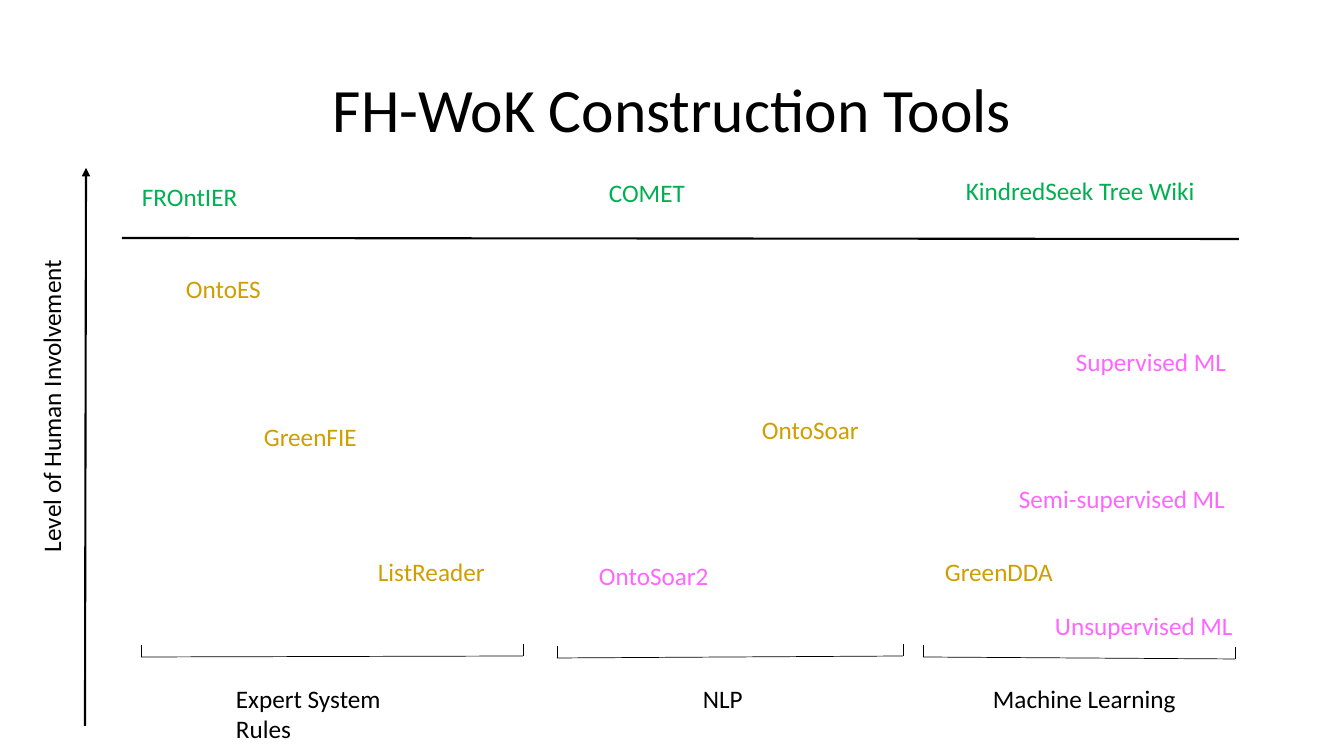
from pptx import Presentation
from pptx.dml.color import RGBColor as RGB
from pptx.enum.shapes import MSO_CONNECTOR as CONNECTOR
from pptx.enum.text import MSO_ANCHOR as ANCHOR, MSO_AUTO_SIZE as AUTO_SIZE, PP_ALIGN as ALIGN
from pptx.oxml.ns import qn
from pptx.util import Inches, Pt
from lxml.etree import SubElement

PX = Inches(1) / 100.8
THEME = {
    "font": "Calibri",
    "title": Pt(44),
    "label": Pt(18),
    "thick": Pt(1.5),
    "thin": Pt(0.5),
    "black": RGB.from_string("000000"),
    "green": RGB.from_string("00B050"),
    "gold": RGB.from_string("D09E00"),
    "pink": RGB.from_string("FF66FF"),
}
LABEL_FRAME = {"word_wrap": False, "auto_size": AUTO_SIZE.SHAPE_TO_FIT_TEXT}
TITLE_FRAME = {"word_wrap": True, "vertical_anchor": ANCHOR.MIDDLE}
LABEL_HEIGHT = 40
TICK = 12

prs = Presentation()
prs.slide_width, prs.slide_height = round(1344 * PX), round(756 * PX)
slide = prs.slides.add_slide(prs.slide_layouts[6])


def add_text(words, box, color="black", size="label", frame_format=LABEL_FRAME):
    label = slide.shapes.add_textbox(*[round(v * PX) for v in box])
    frame = label.text_frame
    frame.text = words
    for key, value in frame_format.items():
        setattr(frame, key, value)
    font = frame.paragraphs[0].runs[0].font
    for key, value in {"name": THEME["font"], "size": THEME[size]}.items():
        setattr(font, key, value)
    font.color.rgb = THEME[color]
    return label


def add_line(ends, weight):
    line = slide.shapes.add_connector(CONNECTOR.STRAIGHT, *[round(v * PX) for v in ends])
    line.line.color.rgb = THEME["black"]
    line.line.width = THEME[weight]
    SubElement(line.element.spPr, qn("a:effectLst"))
    return line


title = add_text("FH-WoK Construction Tools", (93, 40, 1159, 146), "black", "title", TITLE_FRAME)
for key, value in {"alignment": ALIGN.CENTER, "line_spacing": 0.9}.items():
    setattr(title.text_frame.paragraphs[0], key, value)

axis_title = add_text("Level of Human Involvement", (31, 257, 50, 305))
axis_title.element.txBody.bodyPr.set("vert", "vert270")

axis = add_line((85, 726, 86, 168), "thick")
SubElement(axis.line._get_or_add_ln(), qn("a:tailEnd"), type="triangle")
add_line((122, 238, 1239, 239), "thick")

tools = {
    "green": [
        ("FROntIER", 132, 176, 117),
        ("COMET", 599, 172, 97),
        ("KindredSeek Tree Wiki", 956, 170, 258),
    ],
    "gold": [
        ("OntoES", 176, 268, 96),
        ("GreenFIE", 254, 416, 114),
        ("ListReader", 368, 551, 128),
        ("OntoSoar", 752, 409, 118),
        ("GreenDDA", 935, 551, 130),
    ],
    "pink": [
        ("OntoSoar2", 589, 555, 131),
        ("Supervised ML", 1066, 341, 172),
        ("Semi-supervised ML", 1009, 478, 229),
        ("Unsupervised ML", 1045, 605, 201),
    ],
}
for color, group in tools.items():
    for words, left, top, width in group:
        add_text(words, (left, top, width, LABEL_HEIGHT), color)

approaches = [
    ("Expert System Rules", 226, 225, (141, 657, 523, 656)),
    ("NLP", 693, 60, (557, 658, 903, 656)),
    ("Machine Learning", 983, 203, (923, 657, 1235, 659)),
]
for words, left, width, base in approaches:
    add_text(words, (left, 678, width, LABEL_HEIGHT))
    add_line(base, "thin")
    for x, y in (base[:2], base[2:]):
        add_line((x, y, x, y - TICK), "thin")

prs.save("out.pptx")
